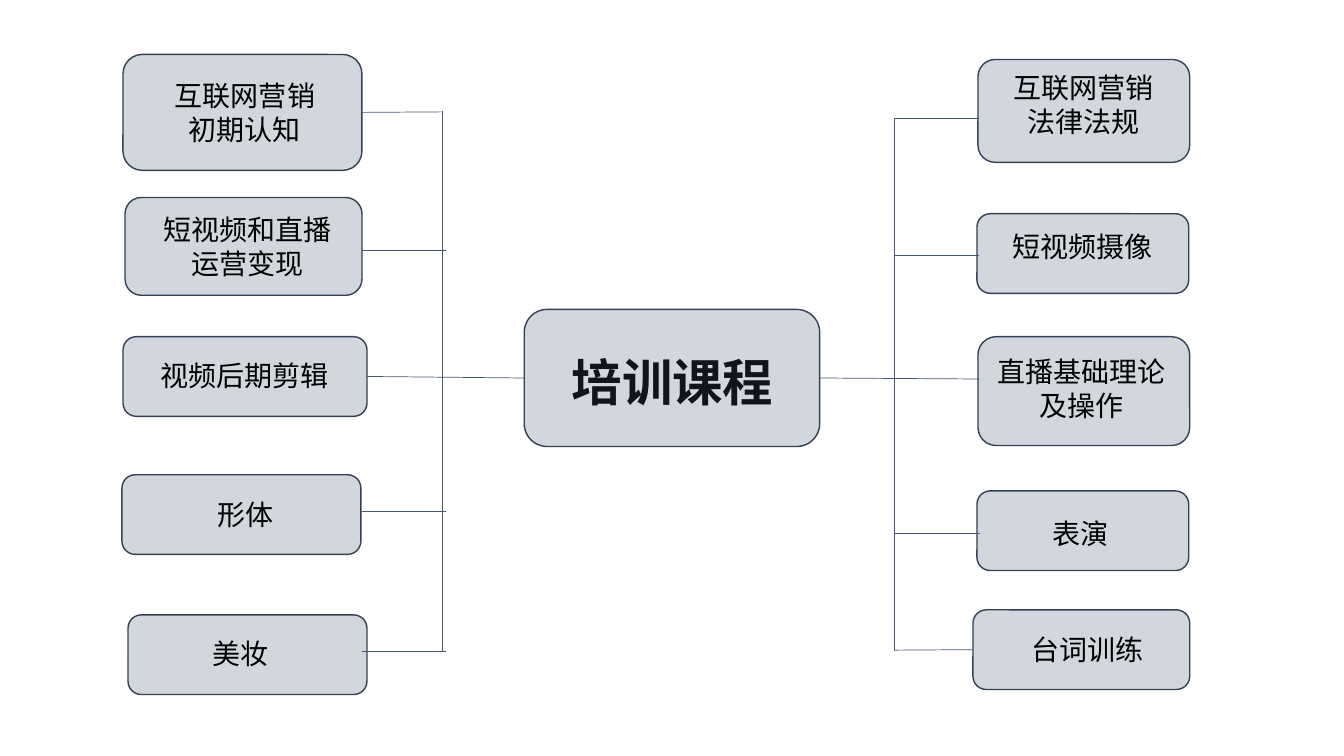
from lxml import etree
from pptx import Presentation
from pptx.dml.color import RGBColor
from pptx.enum.shapes import MSO_CONNECTOR, MSO_SHAPE
from pptx.enum.text import MSO_AUTO_SIZE, PP_ALIGN
from pptx.oxml.ns import qn
from pptx.util import Inches, Pt

SLATE = RGBColor(0x45, 0x56, 0x73)
NAVY = RGBColor(0x33, 0x40, 0x55)
BLACK = RGBColor(0, 0, 0)
ROUND = MSO_SHAPE.ROUNDED_RECTANGLE
STRAIGHT = MSO_CONNECTOR.STRAIGHT
CENTER = PP_ALIGN.CENTER
FIT = MSO_AUTO_SIZE.SHAPE_TO_FIT_TEXT
LEFT, RIGHT = 1, 3


def add_box(shapes, place):
    box = shapes.add_shape(ROUND, *map(Inches, place))
    box.shadow.inherit = False
    box.fill.solid()
    box.fill.fore_color.rgb = SLATE
    color = box.fill._xPr.find(".//" + qn("a:srgbClr"))
    etree.SubElement(color, qn("a:alpha"), val="24000")
    box.line.color.rgb = NAVY
    box.line.width = Pt(1)
    return box


def add_label(shapes, place, lines, size, bold=False):
    frame = shapes.add_textbox(*map(Inches, place)).text_frame
    frame.word_wrap = True
    frame.auto_size = FIT
    frame.text = "\n".join(lines)
    for para in frame.paragraphs:
        para.alignment = CENTER
        para.font.name = "Arial"
        para.font.size = Pt(size)
        para.font.bold = bold
        para.font.color.rgb = BLACK


deck = Presentation()
deck.slide_width = Inches(13.33)
deck.slide_height = Inches(7.5)
slide = deck.slides.add_slide(deck.slide_layouts[6])

# Central theme
add_label(slide.shapes, (5.13, 3.43, 3.08, 0.71), ["培训课程"], 36, True)
core = add_box(slide.shapes, (5.2, 3.07, 2.93, 1.36))

# Courses: lines of text, box place, label place
courses = [
    (["短视频和直播", "运营变现"], (1.24, 1.96, 2.35, 0.97), (1.22, 2.06, 2.47, 0.77)),
    (["视频后期剪辑"], (1.22, 3.34, 2.42, 0.79), (1.15, 3.51, 2.55, 0.44)),
    (["互联网营销", "初期认知"], (1.22, 0.54, 2.37, 1.15), (1.18, 0.73, 2.5, 0.77)),
    (["美妆"], (1.27, 6.1, 2.37, 0.79), (1.14, 6.27, 2.5, 0.44)),
    (["形体"], (1.21, 4.71, 2.37, 0.79), (1.19, 4.89, 2.5, 0.44)),
    (["短视频摄像"], (9.69, 2.12, 2.1, 0.79), (9.64, 2.23, 2.2, 0.44)),
    (["直播基础理论", "及操作"], (9.7, 3.34, 2.1, 1.08), (9.63, 3.47, 2.2, 0.77)),
    (["互联网营销", "法律法规"], (9.7, 0.59, 2.1, 1.02), (9.65, 0.65, 2.2, 0.77)),
    (["台词训练"], (9.65, 6.05, 2.15, 0.79), (9.66, 6.23, 2.26, 0.44)),
    (["表演"], (9.69, 4.87, 2.1, 0.79), (9.62, 5.07, 2.2, 0.44)),
]
boxes = {}
for lines, place, spot in courses:
    group = slide.shapes.add_group_shape()
    boxes["".join(lines)] = add_box(group.shapes, place)
    add_label(group.shapes, spot, lines, 20)

# Lines: start, end, joined start, joined end
links = [
    ((5.2, 3.75), (3.64, 3.74), (core, LEFT), (boxes["视频后期剪辑"], RIGHT)),
    ((4.39, 1.1), (4.39, 6.46), None, None),
    ((8.87, 1.18), (8.87, 6.46), None, None),
    ((9.71, 3.76), (8.13, 3.75), None, (core, RIGHT)),
    ((3.59, 1.11), (4.38, 1.11), (boxes["互联网营销初期认知"], RIGHT), None),
    ((3.59, 2.48), (4.42, 2.48), None, None),
    ((3.59, 5.07), (4.42, 5.07), None, None),
    ((3.59, 6.46), (4.42, 6.46), None, None),
    ((9.71, 1.17), (8.87, 1.17), None, None),
    ((9.71, 2.53), (8.88, 2.53), None, None),
    ((9.72, 5.29), (8.88, 5.29), None, None),
    ((9.65, 6.45), (8.88, 6.45), (boxes["台词训练"], LEFT), None),
]
for start, end, first, last in links:
    link = slide.shapes.add_connector(STRAIGHT, *map(Inches, start + end))
    link.line.color.rgb = SLATE
    link.line.width = Pt(0.5)
    etree.SubElement(link._element.spPr, qn("a:effectLst"))
    if first:
        link.begin_connect(*first)
    if last:
        link.end_connect(*last)

deck.save("out.pptx")
